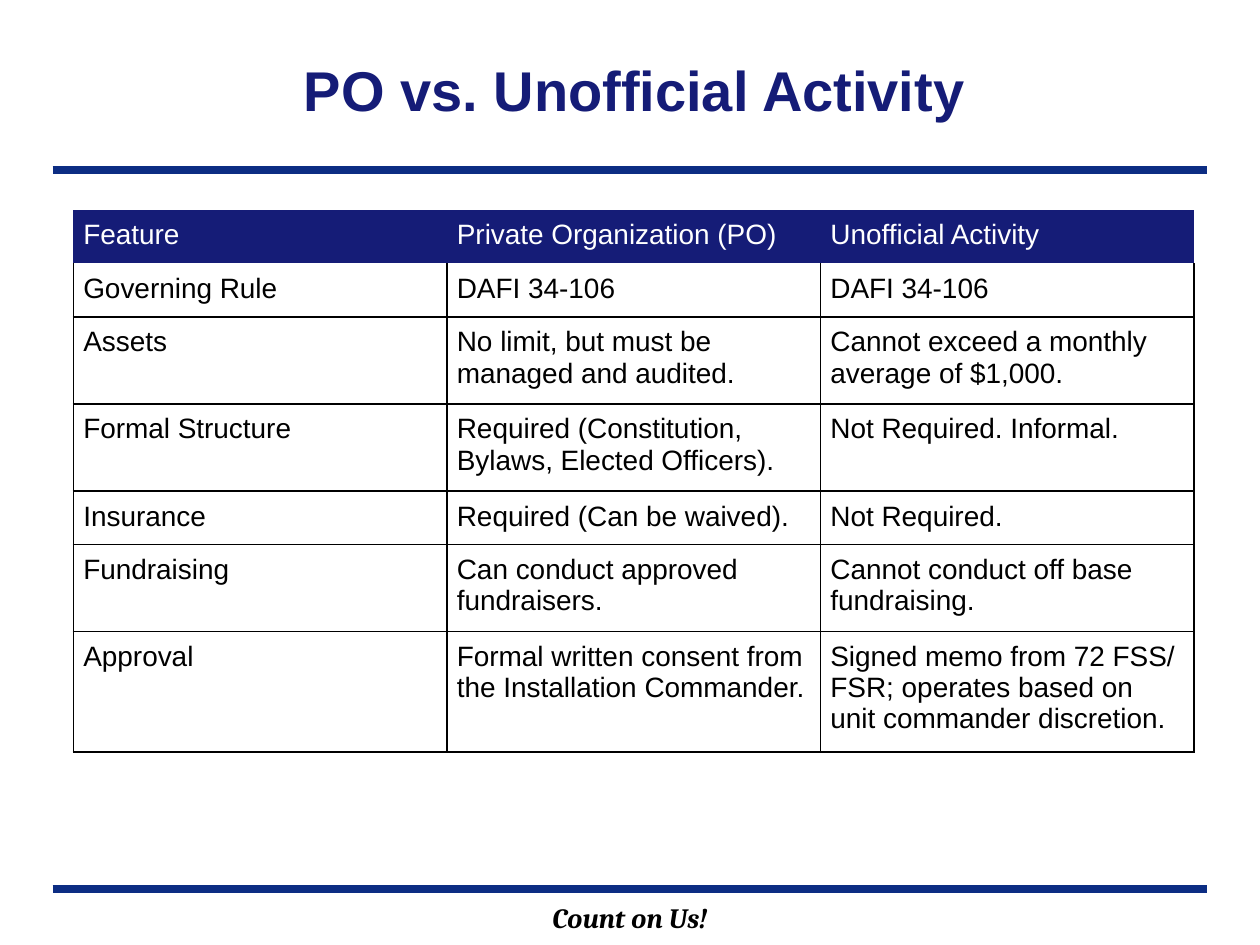
from dataclasses import dataclass

from lxml.etree import SubElement
from pptx import Presentation
from pptx.dml.color import RGBColor
from pptx.enum.shapes import MSO_CONNECTOR
from pptx.enum.text import MSO_ANCHOR, PP_ALIGN
from pptx.oxml import parse_xml
from pptx.oxml.ns import nsdecls, qn
from pptx.util import Cm, Pt


@dataclass(frozen=True)
class Theme:
    navy: str = "151C77"
    rule: str = "0C2D83"
    black: str = "000000"
    white: str = "FFFFFF"
    title_size: float = 32
    body_size: float = 16
    rule_width: float = 4.5
    border_width: float = 1
    body_font: str = "Arial"
    motto_font: str = "Cambria"


@dataclass(frozen=True)
class Label:
    text: str
    left: float
    top: float
    width: float
    height: float
    color: str
    fmt: dict


@dataclass(frozen=True)
class Row:
    feature: str
    private: str
    unofficial: str
    lines: int = 1


THEME = Theme()
RULE_LEFT, RULE_RIGHT = 1.06, 24.34
RULE_TOPS = (3.42, 17.93)
TABLE_LEFT, TABLE_TOP, COLUMN_WIDTH = 1.48, 4.23, 7.53
ROW_HEIGHT, LINE_HEIGHT, CELL_INSET = 1.05, 0.62, 0.2

LABELS = (
    Label("Count on Us!", 3.6, 18.03, 18.2, 0.94, THEME.black,
          dict(name=THEME.motto_font, size=Pt(THEME.body_size), bold=True, italic=True)),
    Label("PO vs. Unofficial Activity", 4.63, 0.2, 16.33, 3.18, THEME.navy,
          dict(name=THEME.body_font, size=Pt(THEME.title_size), bold=True)),
)

ROWS = (
    Row("Feature", "Private Organization (PO)", "Unofficial Activity"),
    Row("Governing Rule", "DAFI 34-106", "DAFI 34-106"),
    Row("Assets", "No limit, but must be managed and audited.",
        "Cannot exceed a monthly average of $1,000.", 2),
    Row("Formal Structure", "Required (Constitution, Bylaws, Elected Officers).",
        "Not Required. Informal.", 2),
    Row("Insurance", "Required (Can be waived).", "Not Required."),
    Row("Fundraising", "Can conduct approved fundraisers.",
        "Cannot conduct off base fundraising.", 2),
    Row("Approval", "Formal written consent from the Installation Commander.",
        "Signed memo from 72 FSS/ FSR; operates based on unit commander discretion.", 3),
)


def apply(target, fmt: dict) -> None:
    for key, value in fmt.items():
        setattr(target, key, value)


def add_text(p, text: str, color: str, fmt: dict) -> None:
    r = p.add_run()
    r.text = text
    apply(r.font, fmt)
    r.font.color.rgb = RGBColor.from_string(color)


def add_label(s, label: Label) -> None:
    sp = s.shapes.add_textbox(Cm(label.left), Cm(label.top), Cm(label.width), Cm(label.height))
    tf = sp.text_frame
    apply(tf, dict(word_wrap=True, vertical_anchor=MSO_ANCHOR.MIDDLE))
    p = tf.paragraphs[0]
    p.alignment = PP_ALIGN.CENTER
    add_text(p, label.text, label.color, label.fmt)


def add_rule(s, top: float) -> None:
    cxn = s.shapes.add_connector(
        MSO_CONNECTOR.STRAIGHT, Cm(RULE_LEFT), Cm(top), Cm(RULE_RIGHT), Cm(top))
    cxn.line.color.rgb = RGBColor.from_string(THEME.rule)
    cxn.line.width = Pt(THEME.rule_width)
    SubElement(cxn._element.spPr, qn("a:effectLst"))


def set_borders(cell, visible: str) -> None:
    tc_pr = cell._tc.get_or_add_tcPr()
    for index, side in enumerate("LRTB"):
        paint = "<a:noFill/>"
        if side in visible:
            paint = f'<a:solidFill><a:srgbClr val="{THEME.black}"/></a:solidFill>'
        tc_pr.insert(index, parse_xml(
            f'<a:ln{side} {nsdecls("a")} w="{Pt(THEME.border_width)}">{paint}</a:ln{side}>'))


def fill_cell(cell, text: str, row_index: int) -> None:
    header = row_index == 0
    inset = Cm(CELL_INSET)
    apply(cell, dict(margin_left=inset, margin_right=inset, margin_top=inset, margin_bottom=inset))
    cell.fill.solid()
    cell.fill.fore_color.rgb = RGBColor.from_string(THEME.navy if header else THEME.white)
    set_borders(cell, "" if header else "LRB" if row_index == 1 else "LRTB")
    add_text(cell.text_frame.paragraphs[0], text, THEME.white if header else THEME.black,
             dict(name=THEME.body_font, size=Pt(THEME.body_size), bold=False))


def add_comparison(s, rows: tuple[Row, ...]) -> None:
    heights = [ROW_HEIGHT + LINE_HEIGHT * (row.lines - 1) for row in rows]
    table = s.shapes.add_table(len(rows), 3, Cm(TABLE_LEFT), Cm(TABLE_TOP),
                               Cm(3 * COLUMN_WIDTH), Cm(sum(heights))).table
    apply(table, dict(first_row=True, horz_banding=False))
    for column in table.columns:
        column.width = Cm(COLUMN_WIDTH)
    for i, (row, height) in enumerate(zip(rows, heights)):
        table.rows[i].height = Cm(height)
        for j, text in enumerate((row.feature, row.private, row.unofficial)):
            fill_cell(table.cell(i, j), text, i)


def main() -> None:
    prs = Presentation()
    apply(prs, dict(slide_width=Cm(25.4), slide_height=Cm(19.05)))
    s = prs.slides.add_slide(prs.slide_layouts[6])
    for top in RULE_TOPS:
        add_rule(s, top)
    for label in LABELS:
        add_label(s, label)
    add_comparison(s, ROWS)
    prs.save("out.pptx")


if __name__ == "__main__":
    main()
